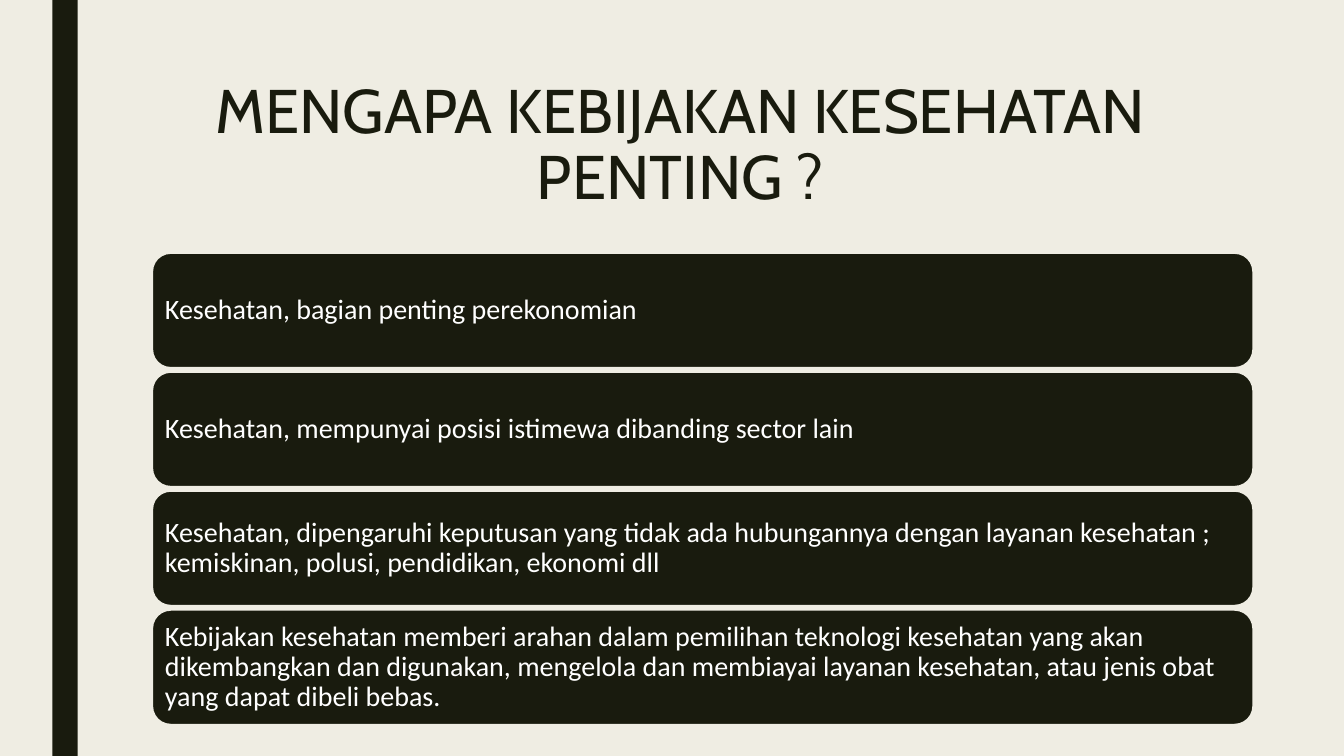
"""Build the slide on why health policy matters."""
from pptx import Presentation
from pptx.dml.color import RGBColor
from pptx.enum.shapes import MSO_SHAPE as SHAPE
from pptx.enum.text import MSO_ANCHOR as ANCHOR, MSO_AUTO_SIZE as FIT, PP_ALIGN as ALIGN
from pptx.util import Inches, Pt

DARK, CREAM, WHITE = "191B0E", "EFEDE3", "FFFFFF"
LEFT, TOP, WIDTH, HEIGHT, PITCH = 1.5, 2.5, 10.94, 1.16, 1.18
REASONS = [
    "Kesehatan, bagian penting perekonomian",
    "Kesehatan, mempunyai posisi istimewa dibanding sector lain",
    "Kesehatan, dipengaruhi keputusan yang tidak ada hubungannya dengan layanan kesehatan ; "
    "kemiskinan, polusi, pendidikan, ekonomi dll",
    "Kebijakan kesehatan memberi arahan dalam pemilihan teknologi kesehatan yang akan "
    "dikembangkan dan digunakan, mengelola dan membiayai layanan kesehatan, atau jenis obat "
    "yang dapat dibeli bebas.",
]


def paint(fmt, color):
    if hasattr(fmt, "solid"):
        fmt.solid()
        fmt = fmt.fore_color
    fmt.rgb = RGBColor.from_string(color)


def write(sp, text, font, size, color, align, spacing, frame):
    tf = sp.text_frame
    for name, value in frame.items():
        setattr(tf, name, value)
    p = tf.paragraphs[0]
    p.alignment, p.line_spacing = align, spacing
    r = p.add_run()
    r.text, r.font.name, r.font.size = text, font, Pt(size)
    paint(r.font.color, color)


prs = Presentation()
prs.slide_width, prs.slide_height = Inches(13.33), Inches(7.5)
s = prs.slides.add_slide(prs.slide_layouts.get_by_name("Title Only"))
paint(s.background.fill, CREAM)

stripe = s.shapes.add_shape(SHAPE.RECTANGLE, Inches(0.52), 0, Inches(0.25), prs.slide_height)
stripe.shadow.inherit = False
paint(stripe.fill, DARK)
stripe.line.fill.background()

title = s.shapes.title
title.left, title.top, title.width, title.height = map(Inches, (LEFT, 0.75, 10.5, 1.62))
write(title, "MENGAPA KEBIJAKAN KESEHATAN PENTING ?", "Cabin", 44, DARK, ALIGN.CENTER, 0.89,
      {"word_wrap": True, "auto_size": FIT.NONE, "vertical_anchor": ANCHOR.TOP})

margins = dict.fromkeys(
    ("margin_left", "margin_top", "margin_right", "margin_bottom"), Inches(0.08))
for row, reason in enumerate(REASONS):
    sp = s.shapes.add_shape(SHAPE.ROUNDED_RECTANGLE,
                            *map(Inches, (LEFT, TOP + row * PITCH, WIDTH, HEIGHT)))
    sp.shadow.inherit = False
    paint(sp.fill, DARK)
    paint(sp.line.fill, CREAM)
    sp.line.width = Pt(2.75)
    write(sp, reason, "Calibri", 20, WHITE, ALIGN.LEFT, 0.9,
          {"word_wrap": True, "vertical_anchor": ANCHOR.MIDDLE, **margins})

prs.save("out.pptx")
